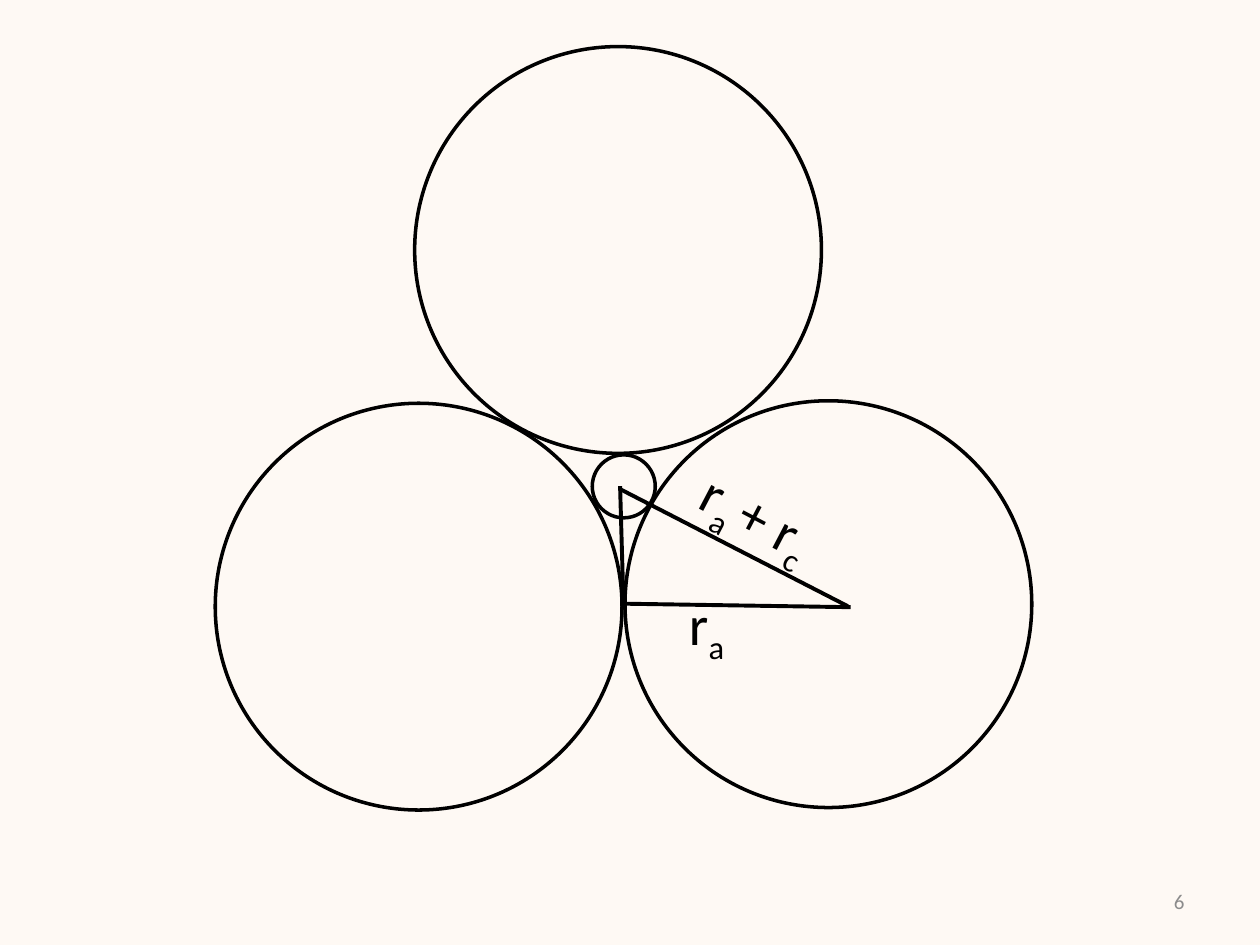
from pptx import Presentation
from pptx.dml.color import RGBColor
from pptx.enum.shapes import MSO_CONNECTOR as Link, MSO_SHAPE as Preset
from pptx.enum.text import MSO_ANCHOR as Anchor, MSO_AUTO_SIZE as Fit, PP_ALIGN as Align
from pptx.oxml.ns import qn
from pptx.util import Cm, Pt

COLORS = {"background": "FEF9F4", "ink": "000000", "page": "8C8C8C"}
FONT = "Calibri"
ANION_DIAMETER = 8.2
CATION_DIAMETER = 1.27


def color(name):
    """Return the named palette colour."""
    return RGBColor.from_string(COLORS[name])


def add_ion(slide, left, top, diameter):
    """Draw an unfilled circle for one ion."""
    ion = slide.shapes.add_shape(Preset.OVAL, Cm(left), Cm(top), Cm(diameter), Cm(diameter))
    ion.shadow.inherit = False
    ion.fill.background()
    ion.line.color.rgb = color("ink")
    ion.line.width = Pt(2)


def add_side(slide, start, end):
    """Draw one side of the triangle between two points."""
    side = slide.shapes.add_connector(Link.STRAIGHT, *map(Cm, start + end))
    side.line.color.rgb = color("ink")
    side.line.width = Pt(2.25)
    properties = side._element.spPr
    properties.append(properties.makeelement(qn("a:effectLst"), {}))


def add_text(slide, box, parts, size, ink):
    """Write (text, is_subscript) parts on one line and return the text box."""
    label = slide.shapes.add_textbox(*map(Cm, box))
    paragraph = label.text_frame.paragraphs[0]
    paragraph.font.name = FONT
    paragraph.font.size = Pt(size)
    paragraph.font.color.rgb = color(ink)
    for text, is_subscript in parts:
        run = paragraph.add_run()
        run.text = text
        if is_subscript:
            run._r.get_or_add_rPr().set("baseline", "-25000")
    return label


def add_radius(slide, box, parts, rotation=0):
    """Label a side of the triangle with its radius formula."""
    radius = add_text(slide, box, parts, 32, "ink")
    radius.rotation = rotation
    radius.text_frame.word_wrap = False
    radius.text_frame.auto_size = Fit.SHAPE_TO_FIT_TEXT


def add_page_number(slide, number):
    """Write the page number at the lower right."""
    page = add_text(slide, (18.21, 17.65, 5.92, 1.02), [(number, False)], 12, "page")
    page.text_frame.word_wrap = True
    page.text_frame.vertical_anchor = Anchor.MIDDLE
    page.text_frame.paragraphs[0].alignment = Align.RIGHT


def main():
    """Build the slide of three anions around a cation."""
    deck = Presentation()
    deck.slide_width, deck.slide_height = Cm(25.4), Cm(19.05)
    slide = deck.slides.add_slide(deck.slide_layouts[6])
    slide.background.fill.solid()
    slide.background.fill.fore_color.rgb = color("background")

    add_page_number(slide, "6")
    for left, top in [(4.34, 8.13), (12.6, 8.08), (8.36, 0.94)]:
        add_ion(slide, left, top, ANION_DIAMETER)
    add_ion(slide, 11.94, 9.17, CATION_DIAMETER)

    for start, end in [
        ((12.5, 9.86), (17.09, 12.22)),
        ((12.5, 9.8), (12.57, 12.24)),
        ((12.6, 12.17), (17.15, 12.24)),
    ]:
        add_side(slide, start, end)

    add_radius(slide, (13.64, 11.76, 1.24, 1.63), [("r", False), ("a", True)])
    add_radius(
        slide,
        (13.84, 9.6, 2.95, 1.63),
        [("r", False), ("a ", True), ("+ r", False), ("c", True)],
        rotation=27.7,
    )
    deck.save("out.pptx")


if __name__ == "__main__":
    main()
